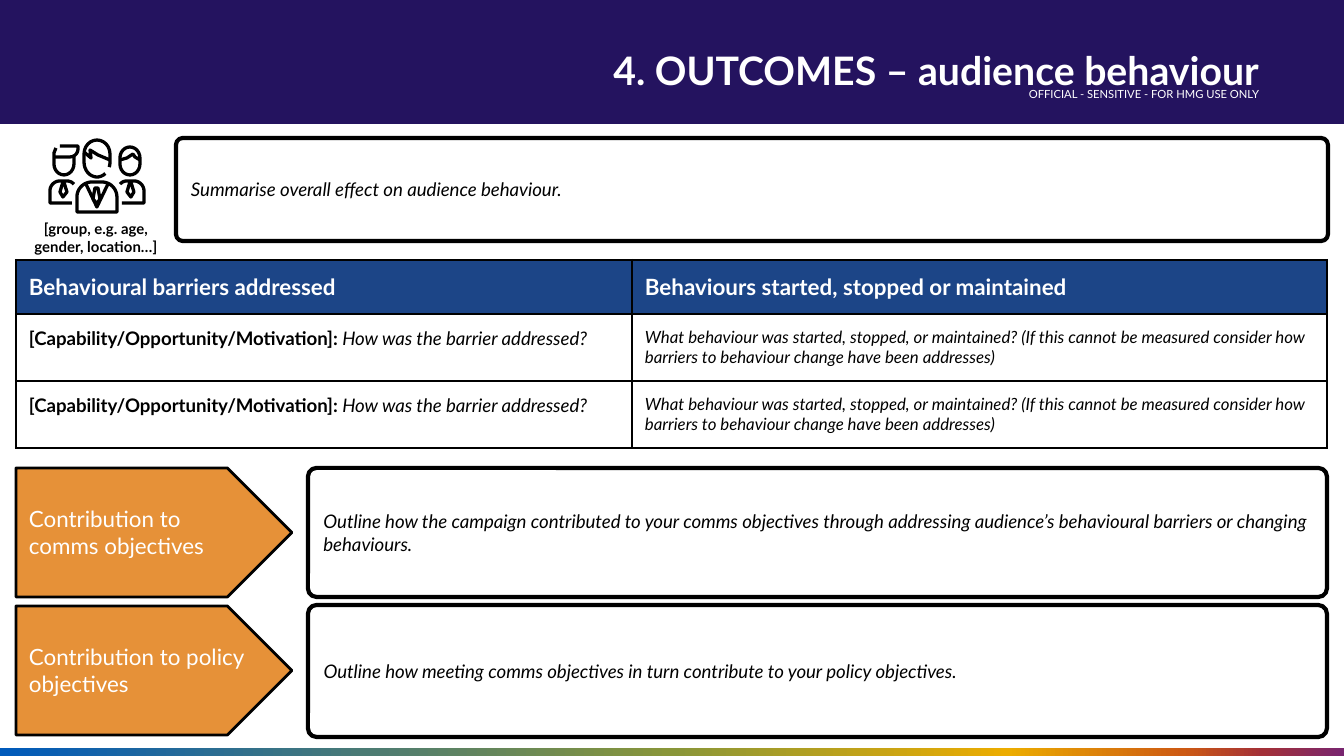
from dataclasses import dataclass
from math import cos, radians, sin
from typing import NamedTuple

from lxml.etree import SubElement
from pptx import Presentation
from pptx.dml.color import RGBColor
from pptx.enum.shapes import MSO_SHAPE
from pptx.enum.text import MSO_ANCHOR, MSO_AUTO_SIZE, PP_ALIGN
from pptx.oxml.ns import qn
from pptx.util import Pt

WIDE, HIGH = 1344, 756
SCALE = 9144000 / WIDE  # EMU in one px
FONT = "Lato"
PAD = 13

BLACK = RGBColor(0x00, 0x00, 0x00)
WHITE = RGBColor(0xFF, 0xFF, 0xFF)
NAVY = RGBColor(0x24, 0x13, 0x5F)
BLUE = RGBColor(0x1C, 0x45, 0x87)
AMBER = RGBColor(0xE6, 0x91, 0x38)
STOPS = [(0, RGBColor(0x00, 0x5A, 0xBB)), (50, RGBColor(0x89, 0x96, 0x39)),
         (75, RGBColor(0xEC, 0xAC, 0x00)), (88, RGBColor(0xCD, 0x5A, 0x13)),
         (94, RGBColor(0xA3, 0x30, 0x38)), (100, RGBColor(0x78, 0x25, 0x6F))]


class Box(NamedTuple):
    x: int
    y: int
    w: int
    h: int


class Run(NamedTuple):
    text: str
    size: int
    color: RGBColor = BLACK
    bold: bool = False
    slant: bool = False


@dataclass
class Panel:
    box: Box
    run: Run
    kind: MSO_SHAPE = MSO_SHAPE.ROUNDED_RECTANGLE
    bend: float = 0.066
    fill: RGBColor | None = None
    line: float = 2.25


class Stroke(NamedTuple):
    dots: list
    shut: bool = False


def emu(px: float) -> int:
    return round(px * SCALE)


def place(shape, box: Box) -> None:
    shape.left, shape.top, shape.width, shape.height = map(emu, box)


def write(frame, runs: list[Run], align=PP_ALIGN.LEFT, pad: int = PAD):
    frame.word_wrap = True
    frame.margin_left = frame.margin_right = emu(pad)
    frame.margin_top = frame.margin_bottom = emu(pad)
    para = frame.paragraphs[0]
    para.alignment = align
    for item in runs:
        run = para.add_run()
        run.text = item.text
        font = run.font
        font.name, font.size = FONT, Pt(item.size)
        font.bold, font.italic = item.bold, item.slant
        font.color.rgb = item.color
    return para


def add_bar(slide, box: Box):
    bar = slide.shapes.add_shape(MSO_SHAPE.RECTANGLE, *map(emu, box))
    bar.shadow.inherit = False
    bar.line.fill.background()
    return bar


def add_note(slide, box: Box, run: Run, align, pad: int = PAD) -> None:
    note = slide.shapes.add_textbox(*map(emu, box))
    write(note.text_frame, [run], align, pad)


def add_panel(slide, panel: Panel) -> None:
    shape = slide.shapes.add_shape(panel.kind, *map(emu, panel.box))
    shape.adjustments[0] = panel.bend
    shape.shadow.inherit = False
    if panel.fill is None:
        shape.fill.background()
    else:
        shape.fill.solid()
        shape.fill.fore_color.rgb = panel.fill
    shape.line.color.rgb = BLACK
    shape.line.width = Pt(panel.line)
    shape.text_frame.vertical_anchor = MSO_ANCHOR.MIDDLE
    write(shape.text_frame, [panel.run])


def arc(x: float, y: float, rx: float, ry: float, start: int, end: int) -> list:
    turns = [radians(start + (end - start) * i / 12) for i in range(13)]
    return [(x + rx * cos(t), y + ry * sin(t)) for t in turns]


def flip(stroke: Stroke) -> Stroke:
    return Stroke([(194 - x, y) for x, y in stroke.dots], stroke.shut)


def draw(group, stroke: Stroke) -> None:
    dots = [(emu(x), emu(y)) for x, y in stroke.dots]
    pen = group.shapes.build_freeform(*dots[0], scale=1.0)
    pen.add_line_segments(dots[1:], close=stroke.shut)
    shape = pen.convert_to_shape()
    shape.shadow.inherit = False
    shape.fill.background()
    shape.line.color.rgb = BLACK
    shape.line.width = Pt(1.75)


def edge_cell(cell) -> None:
    props = cell._tc.get_or_add_tcPr()
    for side in ("lnL", "lnR", "lnT", "lnB"):
        line = SubElement(props, qn(f"a:{side}"), w=str(Pt(1.5)))
        fill = SubElement(line, qn("a:solidFill"))
        SubElement(fill, qn("a:srgbClr"), val=str(BLACK))


def add_grid(slide, box: Box, cols: list[int], rows: list[int], cells: list) -> None:
    table = slide.shapes.add_table(len(rows), len(cols), *map(emu, box)).table
    for col, w in zip(table.columns, cols):
        col.width = emu(w)
    for r, h in enumerate(rows):
        table.rows[r].height = emu(h)
        for c, runs in enumerate(cells[r]):
            cell = table.cell(r, c)
            edge_cell(cell)
            if r == 0:
                cell.fill.solid()
                cell.fill.fore_color.rgb = BLUE
            else:
                cell.fill.background()
            write(cell.text_frame, runs)
            cell.margin_left = cell.margin_right = emu(PAD)
            cell.margin_top = cell.margin_bottom = emu(PAD)


def main() -> None:
    deck = Presentation()
    deck.slide_width, deck.slide_height = emu(WIDE), emu(HIGH)
    slide = deck.slides.add_slide(deck.slide_layouts[5])

    # Header and footer bands
    head = add_bar(slide, Box(0, 0, WIDE, 124))
    head.fill.solid()
    head.fill.fore_color.rgb = NAVY
    foot = add_bar(slide, Box(0, 748, WIDE, 8))
    foot.fill.gradient()
    foot.fill.gradient_angle = 0
    stops = foot._element.spPr.find(f".//{qn('a:gsLst')}")
    stops.clear()
    for spot, color in STOPS:
        stop = SubElement(stops, qn("a:gs"), pos=str(spot * 1000))
        SubElement(stop, qn("a:srgbClr"), val=str(color))
    add_note(slide, Box(824, 82, 440, 24),
             Run("OFFICIAL - SENSITIVE - FOR HMG USE ONLY", 6, WHITE), PP_ALIGN.RIGHT, 5)

    # Title, raised above the header band
    title = slide.shapes.title
    slide.shapes._spTree.append(title._element)
    place(title, Box(372, 26, 900, 73))
    title.text_frame.auto_size = MSO_AUTO_SIZE.NONE
    title.text_frame.vertical_anchor = MSO_ANCHOR.TOP
    para = write(title.text_frame, [Run("4. OUTCOMES – audience behaviour", 21, WHITE, True)],
                 PP_ALIGN.RIGHT)
    para.line_spacing, para.space_before, para.space_after = 1.15, Pt(0), Pt(4)

    # Audience icon: side figures share a mirrored body
    coat = Stroke(arc(67, 190, 9, 9, 320, 270) + arc(60, 191, 10, 10, 270, 180)
                  + [(50, 203), (72, 203)])
    tie = Stroke([(63, 182), (60, 192), (63, 197), (67, 192), (64, 182)], True)
    icon = [
        coat, tie, flip(coat), flip(tie),
        Stroke([(56, 148), (54, 153)] + arc(64, 164, 10, 11, 180, 0) + [(74, 157)]),
        Stroke([(54, 157), (70, 157)] + arc(70, 149, 8, 8, 80, 0) + [(78, 146), (60, 146)]),
        Stroke(arc(130, 158, 10, 11, 180, 360) + arc(130, 164, 10, 11, 0, 180), True),
        Stroke([(120, 160), (127, 158), (133, 154), (135, 157), (140, 160)]),
        Stroke(arc(97, 162, 13, 15, 50, 180) + arc(97, 154, 13, 14, 180, 360)
               + arc(97, 162, 13, 15, 0, 20)),
        Stroke([(84, 152), (91, 158), (90, 150), (98, 155), (110, 160)]),
        Stroke([(77, 212)] + arc(92, 197, 15, 15, 180, 270)
               + arc(102, 197, 15, 15, 270, 360) + [(117, 212)], True),
        Stroke([(86, 184), (97, 207), (108, 184)]),
        Stroke([(95, 188), (93, 199), (97, 204), (100, 199), (98, 188)], True),
    ]
    group = slide.shapes.add_group_shape()
    for stroke in icon:
        draw(group, stroke)
    add_note(slide, Box(16, 207, 160, 82),
             Run("[group, e.g. age, gender, location…]", 8, bold=True), PP_ALIGN.CENTER)

    # Barriers and behaviours
    body = [[Run("[Capability/Opportunity/Motivation]: ", 10, bold=True),
             Run("How was the barrier addressed?", 10, slant=True)],
            [Run("What behaviour was started, stopped, or maintained? (If this cannot be "
                 "measured consider how barriers to behaviour change have been addresses)",
                 9, slant=True)]]
    top = [[Run(text, 12, WHITE, True)] for text in
           ("Behavioural barriers addressed", "Behaviours started, stopped or maintained")]
    add_grid(slide, Box(16, 260, 1311, 188), [616, 695], [54, 67, 67], [top, body, body])

    # Summary panel, then each contribution arrow with its panel
    add_panel(slide, Panel(Box(176, 138, 1152, 103),
                           Run("Summarise overall effect on audience behaviour.", 10, slant=True)))
    pairs = [
        (468, 468, 129, "Contribution to comms objectives",
         "Outline how the campaign contributed to your comms objectives through addressing "
         "audience’s behavioural barriers or changing behaviours."),
        (606, 605, 132, "Contribution to policy objectives",
         "Outline how meeting comms objectives in turn contribute to your policy objectives."),
    ]
    for y, edge, tall, name, text in pairs:
        add_panel(slide, Panel(Box(16, y, 276, 129), Run(name, 12, WHITE),
                               MSO_SHAPE.PENTAGON, 0.5, AMBER, 1.5))
        add_panel(slide, Panel(Box(308, edge, 1019, tall), Run(text, 10, slant=True)))

    deck.save("out.pptx")


if __name__ == "__main__":
    main()
